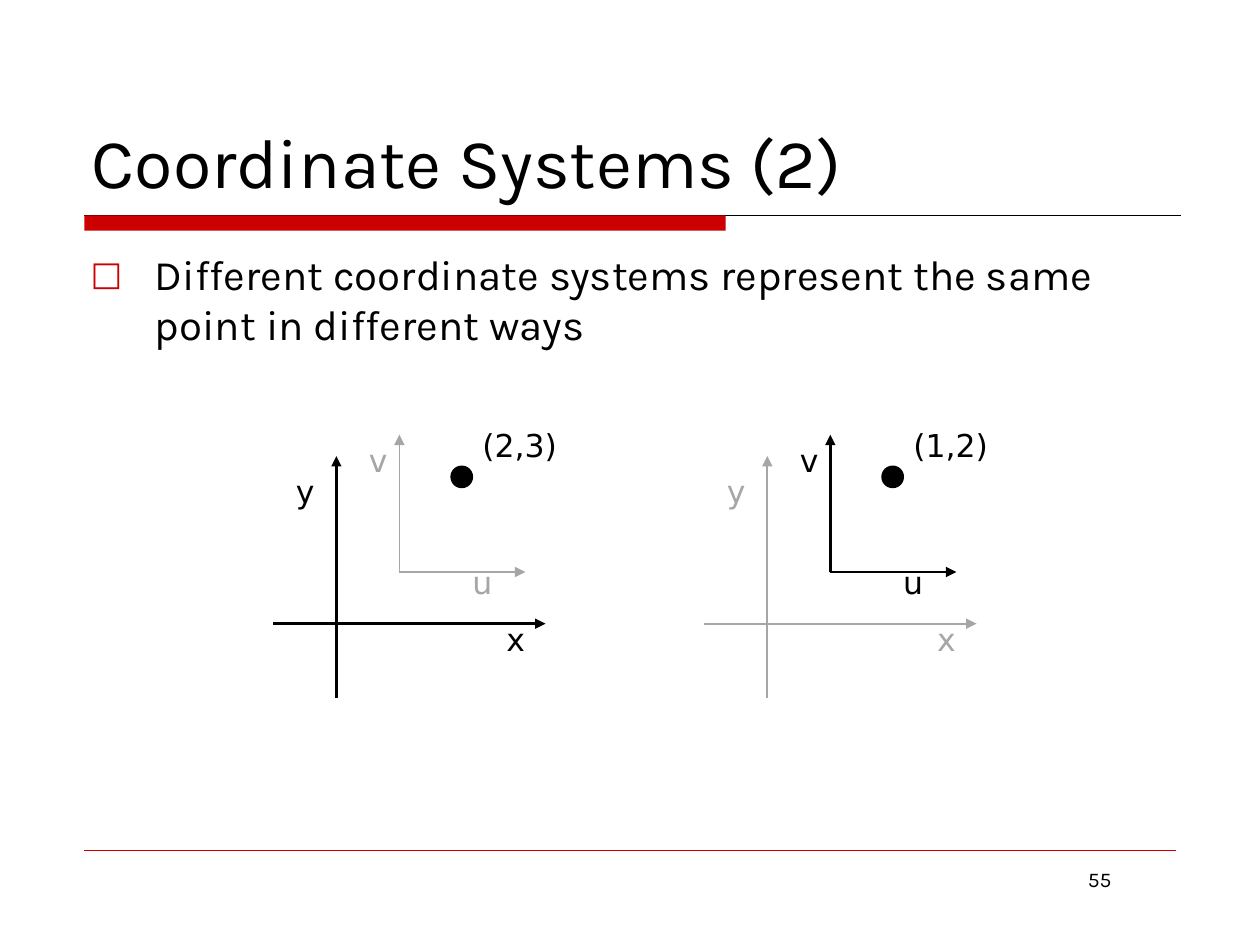
import pptx
import pptx.util
import pptx.dml.color
import pptx.enum.shapes
import pptx.enum.text
import pptx.oxml
import pptx.oxml.ns
from lxml import etree

Inches, Pt = pptx.util.Inches, pptx.util.Pt
SHAPE = pptx.enum.shapes.MSO_SHAPE
ALIGN = pptx.enum.text.PP_ALIGN
ANCHOR = pptx.enum.text.MSO_ANCHOR

COLORS = {"red": "CC0000", "black": "000000", "gray": "A6A6A6"}
TEXT_FONT, LABEL_FONT = "Karla", "DejaVu Sans"
TITLE = "Coordinate Systems (2)"
BULLET = "Different coordinate systems represent the same point in different ways"
PAGE = "55"

FRAMES = {
    "xy": {
        "axes": [(2.67, 5.54, 2.67, 3.62), (2.17, 4.95, 4.33, 4.95)],
        "labels": [("x", 3.92, 4.87), ("y", 2.25, 3.7)],
    },
    "uv": {
        "axes": [(3.17, 4.54, 3.17, 3.45), (3.17, 4.54, 4.17, 4.54)],
        "labels": [("u", 3.65, 4.42), ("v", 2.83, 3.45)],
    },
}
DIAGRAMS = [
    {"point": "(2,3)", "xy": ("black", 1.5), "uv": ("gray", 0.75)},
    {"point": "(1,2)", "xy": ("gray", 1), "uv": ("black", 1.5)},
]
DIAGRAM_STEP = 3.42


def rgb(name):
    return pptx.dml.color.RGBColor.from_string(COLORS[name])


def set_text(tf, text, size, font, color="black", align=ALIGN.LEFT):
    tf.text = text
    p = tf.paragraphs[0]
    p.alignment = align
    r = p.runs[0]
    r.font.size, r.font.name = Pt(size), font
    r.font.color.rgb = rgb(color)
    return p


def place(sp, left, top, width, height):
    sp.left, sp.top = Inches(left), Inches(top)
    sp.width, sp.height = Inches(width), Inches(height)


def add_text(s, text, box, size, font, color="black", align=ALIGN.LEFT, wrap=False):
    sp = s.shapes.add_textbox(*map(Inches, box))
    sp.text_frame.word_wrap = wrap
    set_text(sp.text_frame, text, size, font, color, align)


def add_line(s, ends, color, width, arrow=False):
    sp = s.shapes.add_connector(
        pptx.enum.shapes.MSO_CONNECTOR.STRAIGHT, *map(Inches, ends))
    sp.line.color.rgb = rgb(color)
    sp.line.width = Pt(width)
    if arrow:
        ln = sp.line._get_or_add_ln()
        etree.SubElement(ln, pptx.oxml.ns.qn("a:tailEnd"), type="triangle")
    etree.SubElement(sp._element.spPr, pptx.oxml.ns.qn("a:effectLst"))


def add_solid(s, kind, box, color, line_width=None):
    sp = s.shapes.add_shape(kind, *map(Inches, box))
    sp.shadow.inherit = False
    sp.fill.solid()
    sp.fill.fore_color.rgb = rgb(color)
    if line_width:
        sp.line.color.rgb = rgb(color)
        sp.line.width = Pt(line_width)
    else:
        sp.line.fill.background()


def set_bullet(p, char, color, indent):
    pPr = p._p.get_or_add_pPr()
    pPr.set("marL", str(Inches(indent)))
    pPr.set("indent", str(-Inches(indent)))
    qn = pptx.oxml.ns.qn
    spacing = etree.SubElement(pPr, qn("a:spcBef"))
    etree.SubElement(spacing, qn("a:spcPct"), val="20000")
    tint = etree.SubElement(pPr, qn("a:buClr"))
    etree.SubElement(tint, qn("a:srgbClr"), val=COLORS[color])
    etree.SubElement(pPr, qn("a:buSzPct"), val="80000")
    etree.SubElement(pPr, qn("a:buFont"), typeface=LABEL_FONT)
    etree.SubElement(pPr, qn("a:buChar"), char=char)


def add_diagram(s, diagram, dx):
    for name, frame in FRAMES.items():
        color, width = diagram[name]
        for x1, y1, x2, y2 in frame["axes"]:
            add_line(s, (x1 + dx, y1, x2 + dx, y2), color, width, arrow=True)
        for text, x, y in frame["labels"]:
            add_text(s, text, (x + dx, y, 0.36, 0.4), 18, LABEL_FONT, color)
    add_solid(s, SHAPE.OVAL, (3.58 + dx, 3.7, 0.17, 0.17), "black", 0.75)
    add_text(s, diagram["point"], (3.73 + dx, 3.33, 0.84, 0.5), 18, LABEL_FONT)


def main():
    """Build the coordinate systems slide."""
    prs = pptx.Presentation()
    prs.slide_width, prs.slide_height = Inches(10), Inches(7.5)
    s = prs.slides.add_slide(prs.slide_layouts[1])

    add_line(s, (0.67, 1.71, 9.37, 1.71), "black", 0.75)
    add_solid(s, SHAPE.RECTANGLE, (0.67, 1.71, 5.09, 0.12), "red")
    add_line(s, (0.67, 6.75, 9.33, 6.75), "red", 0.25)

    title, body = s.placeholders
    place(title, 0.63, 0.33, 8.75, 1.33)
    title.text_frame.vertical_anchor = ANCHOR.BOTTOM
    set_text(title.text_frame, TITLE, 40, TEXT_FONT)
    place(body, 0.62, 1.92, 8.75, 4.67)
    set_bullet(set_text(body.text_frame, BULLET, 24, TEXT_FONT), "□", "red", 0.51)
    add_text(s, PAGE, (6.75, 6.83, 2.17, 0.52), 12, TEXT_FONT,
             align=ALIGN.RIGHT, wrap=True)

    for i, diagram in enumerate(DIAGRAMS):
        add_diagram(s, diagram, i * DIAGRAM_STEP)

    prs.save("out.pptx")


if __name__ == "__main__":
    main()
